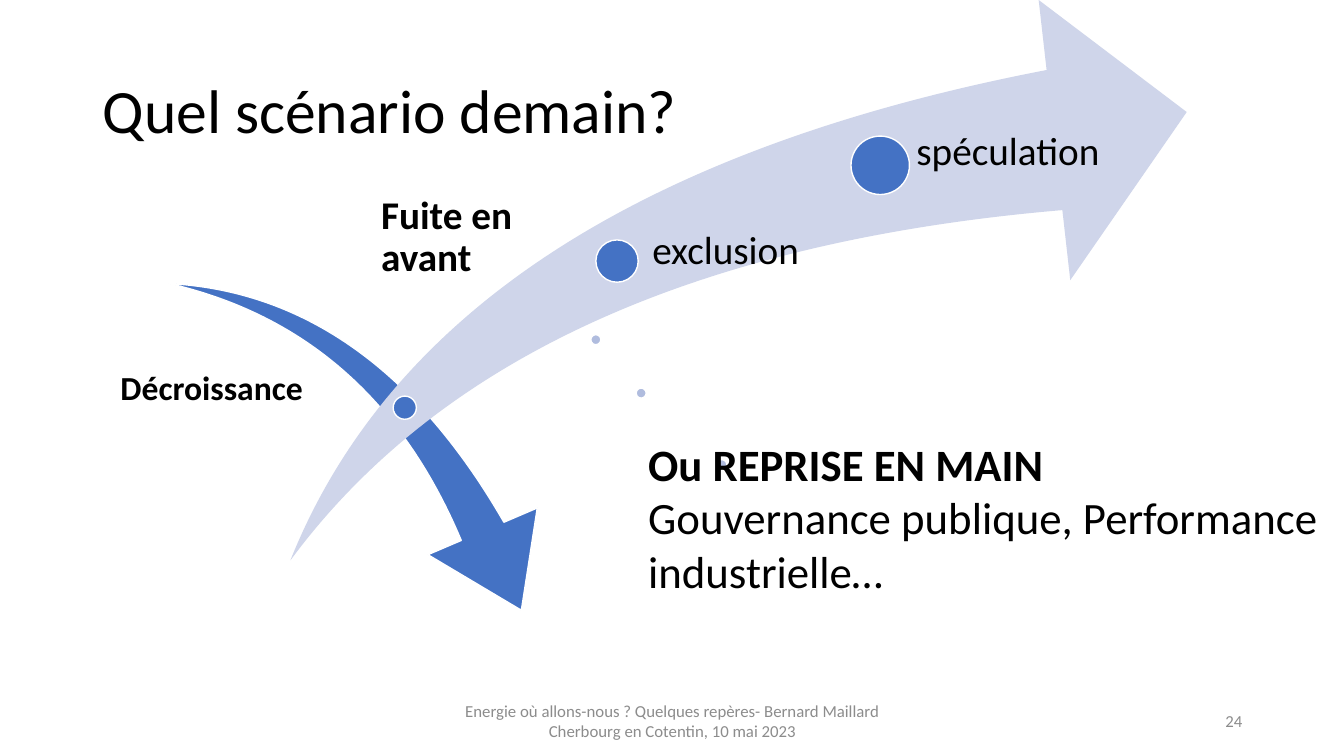
from pptx import Presentation
from pptx.dml.color import RGBColor
from pptx.enum.shapes import MSO_SHAPE
from pptx.enum.text import MSO_ANCHOR, MSO_AUTO_SIZE, PP_ALIGN
from pptx.util import Inches, Pt

BLACK = RGBColor(0x00, 0x00, 0x00)
WHITE = RGBColor(0xFF, 0xFF, 0xFF)
GREY = RGBColor(0x8C, 0x8C, 0x8C)
BLUE = RGBColor(0x44, 0x72, 0xC4)
SOFT_BLUE = RGBColor(0xB0, 0xBC, 0xDE)
PALE_BLUE = RGBColor(0xCF, 0xD5, 0xEA)

SWOOSH, OVAL = MSO_SHAPE.SWOOSH_ARROW, MSO_SHAPE.OVAL
TOP, MIDDLE, BOTTOM = MSO_ANCHOR.TOP, MSO_ANCHOR.MIDDLE, MSO_ANCHOR.BOTTOM
LEFT, CENTER, RIGHT = PP_ALIGN.LEFT, PP_ALIGN.CENTER, PP_ALIGN.RIGHT
NO_AUTOFIT = MSO_AUTO_SIZE.NONE


class ScenarioPage:
    font = "Calibri"
    insets = (0.1, 0.05, 0.1, 0.05)

    def __init__(self, deck):
        self.page = deck.slides.add_slide(deck.slide_layouts[5])

    def title(self, text, place):
        box = self.page.shapes.title
        box.left, box.top, box.width, box.height = map(Inches, place)
        self.fill_frame(box.text_frame, [text], 44, anchor=MIDDLE, spacing=0.9)

    def text(self, paragraphs, place, size, **style):
        box = self.page.shapes.add_textbox(*map(Inches, place))
        self.fill_frame(box.text_frame, paragraphs, size, **style)

    def fill_frame(self, frame, paragraphs, size, color=BLACK, bold_first=False,
                   align=LEFT, anchor=TOP, spacing=1.0, insets=insets):
        """Set text and style; bold_first makes only the first paragraph bold."""
        frame.text = "\n".join(paragraphs)
        frame.word_wrap = True
        frame.auto_size = NO_AUTOFIT
        frame.vertical_anchor = anchor
        (frame.margin_left, frame.margin_top,
         frame.margin_right, frame.margin_bottom) = map(Inches, insets)
        for index, paragraph in enumerate(frame.paragraphs):
            paragraph.alignment = align
            paragraph.line_spacing = spacing
            for span in paragraph.runs:
                span.font.name = self.font
                span.font.size = Pt(size)
                span.font.bold = bold_first and index == 0
                span.font.color.rgb = color

    def shape(self, kind, place, fill, outlined=True):
        shape = self.page.shapes.add_shape(kind, *map(Inches, place))
        shape.shadow.inherit = False
        shape.fill.solid()
        shape.fill.fore_color.rgb = fill
        if outlined:
            shape.line.color.rgb = WHITE
            shape.line.width = Pt(1)
        else:
            shape.line.fill.background()
        return shape

    def swoosh(self, place, fill, adjustments, rotation=0, outlined=True):
        arrow = self.shape(SWOOSH, place, fill, outlined)
        arrow.adjustments[0], arrow.adjustments[1] = adjustments
        arrow.rotation = rotation

    def dot(self, left, top, diameter, fill):
        self.shape(OVAL, (left, top, diameter, diameter), fill)


def main():
    deck = Presentation()
    deck.slide_width, deck.slide_height = Inches(13.33), Inches(7.5)
    page = ScenarioPage(deck)
    page.title("Quel scénario demain?", (0.92, 0.4, 11.5, 1.45))

    page.swoosh((1.58, 2.94, 4.11, 2.86), BLUE, (0.16, 0.31), rotation=73.3)
    for left, top in ((5.86, 3.32), (6.31, 3.85), (7.11, 4.56)):
        page.dot(left, top, 0.1, SOFT_BLUE)
    page.text(["Décroissance"], (1.13, 3.32, 1.94, 0.76), 24, bold_first=True,
              align=CENTER, anchor=BOTTOM, spacing=0.9, insets=(0.03,) * 4)

    footer = {"color": GREY, "anchor": MIDDLE}
    page.text(["Energie où allons-nous ? Quelques repères- Bernard Maillard "
               "Cherbourg en Cotentin, 10 mai 2023"],
              (4.42, 6.95, 4.5, 0.4), 12, align=CENTER, **footer)
    page.text(["24"], (9.42, 6.95, 3, 0.4), 12, align=RIGHT, **footer)

    page.swoosh((2.88, 0, 8.89, 5.56), PALE_BLUE, (0.25, 0.25), outlined=False)
    stages = (
        ("Fuite en avant", (3.9, 3.93, 0.23), (3.66, 1.94, 2.07, 1.61), 0.12, True),
        ("exclusion", (5.91, 2.38, 0.42), (6.25, 2.29, 2.13, 3.02), 0.22, False),
        ("spéculation", (8.44, 1.35, 0.58), (8.78, 1.31, 2.13, 4.09), 0.31, False),
    )
    for label, dot, place, indent, bold in stages:
        page.dot(*dot, BLUE)
        page.text([label], place, 28, bold_first=bold, spacing=0.9,
                  insets=(indent, 0, 0, 0))

    page.text(["Ou REPRISE EN MAIN",
               "Gouvernance publique, Performance industrielle…"],
              (6.33, 4.28, 7.28, 1.72), 32, bold_first=True)
    deck.save("out.pptx")


if __name__ == "__main__":
    main()
